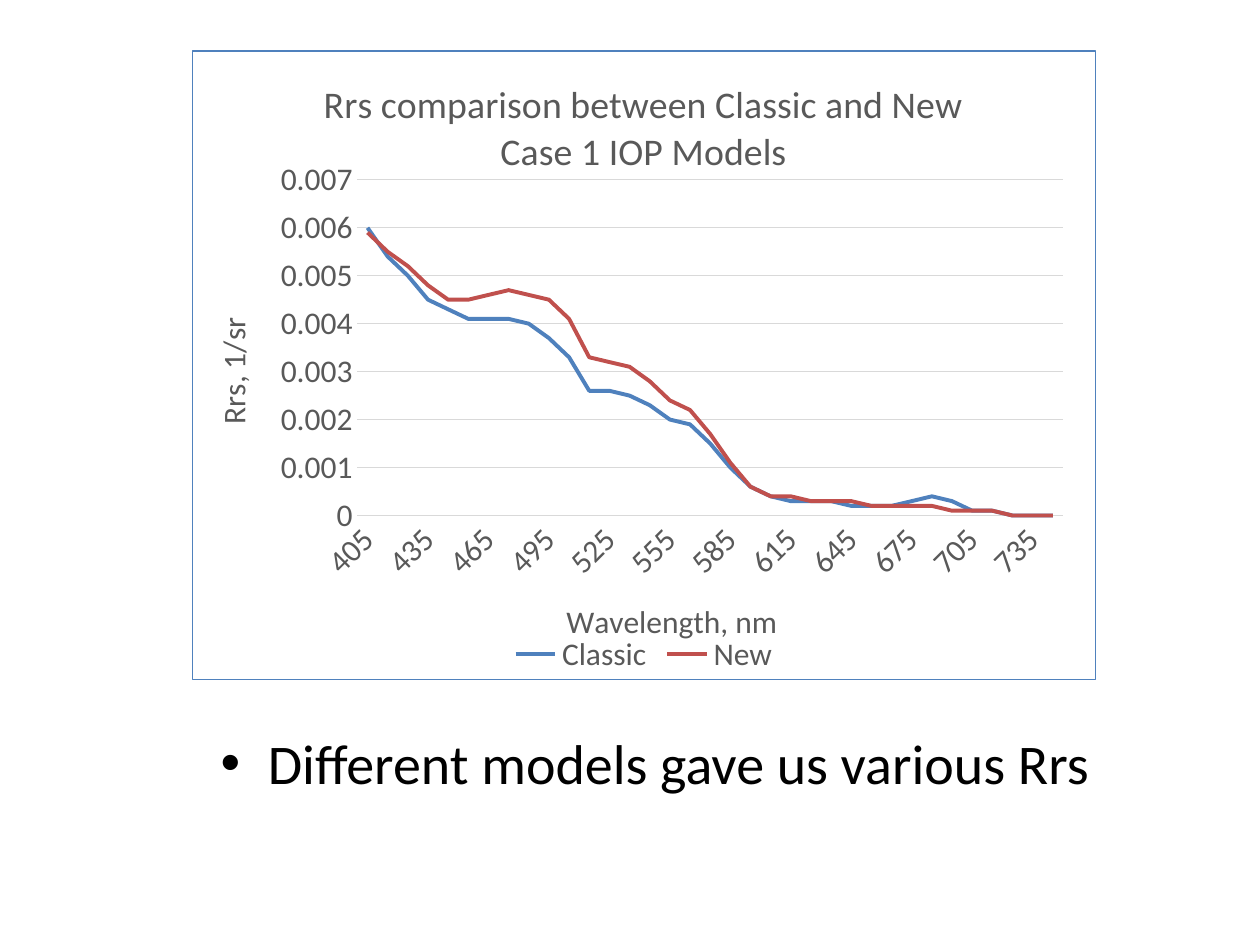
from dataclasses import dataclass

from lxml import etree
from pptx import Presentation
from pptx.chart.data import CategoryChartData
from pptx.dml.color import RGBColor
from pptx.enum.chart import XL_CHART_TYPE, XL_LEGEND_POSITION, XL_TICK_MARK
from pptx.oxml import parse_xml
from pptx.oxml.ns import nsdecls, qn
from pptx.util import Inches, Pt

LINE_CHART = XL_CHART_TYPE.LINE
LEGEND_BOTTOM = XL_LEGEND_POSITION.BOTTOM
NO_TICKS = XL_TICK_MARK.NONE


@dataclass(frozen=True)
class Theme:
    font: str = "Calibri"
    ink: str = "000000"
    label: str = "595959"
    grid: str = "D9D9D9"
    classic: str = "4F81BD"
    new: str = "C0504D"
    body_size: float = 32
    title_size: float = 21.6
    label_size: float = 18
    thin: float = 0.75
    curve: float = 2.25


THEME = Theme()
CHART_BOX = (1.52, 0.4, 7.18, 5)
BODY_BOX = (1.65, 5.73, 7.25, 1.14)
PLOT_SHARES = {"x": 0.18, "y": 0.2, "w": 0.78, "h": 0.53}
PLOT_SHARES = {"x": 0.183, "y": 0.205, "w": 0.781, "h": 0.534}

WAVELENGTHS = range(405, 746, 10)
# Reflectance in units of 0.0001 per steradian
CLASSIC = [60, 54, 50, 45, 43, 41, 41, 41, 40, 37, 33, 26, 26, 25, 23, 20, 19, 15,
           10, 6, 4, 3, 3, 3, 2, 2, 2, 3, 4, 3, 1, 1, 0, 0, 0]
NEW = [59, 55, 52, 48, 45, 45, 46, 47, 46, 45, 41, 33, 32, 31, 28, 24, 22, 17,
       11, 6, 4, 4, 3, 3, 3, 2, 2, 2, 2, 1, 1, 1, 0, 0, 0]


def set_font(font, size, color):
    font.name = THEME.font
    font.size = Pt(size)
    font.bold = False
    font.color.rgb = RGBColor.from_string(color)


def set_line(line, width, color):
    line.width = Pt(width)
    line.color.rgb = RGBColor.from_string(color)


def set_title(owner, text, size):
    """Title a chart or one of its axes."""
    title = owner.chart_title if hasattr(owner, "chart_title") else owner.axis_title
    title.text_frame.text = text
    set_font(title.text_frame.paragraphs[0].font, size, THEME.label)


def place_plot(chart, shares):
    """Fix the inner plot area as shares of the chart's size."""
    plot_area = chart.element.find(".//" + qn("c:plotArea"))
    for layout in plot_area.findall(qn("c:layout")):
        plot_area.remove(layout)
    layout = etree.Element(qn("c:layout"))
    manual = etree.SubElement(layout, qn("c:manualLayout"))
    settings = {"layoutTarget": "inner", "xMode": "edge", "yMode": "edge", **shares}
    for name, value in settings.items():
        etree.SubElement(manual, qn(f"c:{name}")).set("val", str(value))
    plot_area.insert(0, layout)


def add_border(chart):
    border = parse_xml(
        f'<c:spPr {nsdecls("c", "a")}><a:noFill/><a:ln w="{Pt(THEME.thin)}">'
        f'<a:solidFill><a:srgbClr val="{THEME.classic}"/></a:solidFill></a:ln></c:spPr>')
    chart.element.find(qn("c:txPr")).addprevious(border)


def format_axes(chart):
    wavelength, reflectance = chart.category_axis, chart.value_axis
    for axis, text in ((wavelength, "Wavelength, nm"), (reflectance, "Rrs, 1/sr")):
        set_title(axis, text, THEME.label_size)
        set_font(axis.tick_labels.font, THEME.label_size, THEME.label)
        axis.major_tick_mark = axis.minor_tick_mark = NO_TICKS

    set_line(wavelength.format.line, THEME.thin, THEME.grid)
    wavelength.has_major_gridlines = False
    labels = wavelength._element.find(qn("c:txPr")).find(qn("a:bodyPr"))
    labels.set("rot", str(-45 * 60000))
    skip = etree.Element(qn("c:tickLblSkip"))
    skip.set("val", "3")
    wavelength._element.find(qn("c:noMultiLvlLbl")).addprevious(skip)

    reflectance.format.line.fill.background()
    reflectance.minimum_scale, reflectance.maximum_scale = 0, 0.007
    reflectance.major_unit = 0.001
    reflectance.has_major_gridlines = True
    set_line(reflectance.major_gridlines.format.line, THEME.thin, THEME.grid)


def add_comparison_chart(page, box):
    data = CategoryChartData()
    data.categories = [str(wavelength) for wavelength in WAVELENGTHS]
    for name, values in (("Classic", CLASSIC), ("New", NEW)):
        data.add_series(name, [value / 10000 for value in values])
    chart = page.shapes.add_chart(LINE_CHART, *map(Inches, box), data).chart

    set_font(chart.font, THEME.label_size, THEME.ink)
    set_title(chart, "Rrs comparison between Classic and New Case 1 IOP Models",
              THEME.title_size)
    chart.has_legend = True
    chart.legend.position = LEGEND_BOTTOM
    chart.legend.include_in_layout = False
    set_font(chart.legend.font, THEME.label_size, THEME.label)

    chart.plots[0].vary_by_categories = False
    for series, color in zip(chart.plots[0].series, (THEME.classic, THEME.new)):
        series.smooth = False
        set_line(series.format.line, THEME.curve, color)
    format_axes(chart)
    place_plot(chart, PLOT_SHARES)
    add_border(chart)


def fill_body(page, box):
    body = page.placeholders[1]
    body.left, body.top, body.width, body.height = map(Inches, box)
    para = body.text_frame.paragraphs[0]
    para.text = "Different models gave us various Rrs"
    set_font(para.font, THEME.body_size, THEME.ink)


def main():
    deck = Presentation()
    deck.slide_width, deck.slide_height = Inches(10), Inches(7.5)
    page = deck.slides.add_slide(deck.slide_layouts[1])
    title = page.shapes.title.element
    title.getparent().remove(title)
    fill_body(page, BODY_BOX)
    add_comparison_chart(page, CHART_BOX)
    deck.save("out.pptx")


if __name__ == "__main__":
    main()
